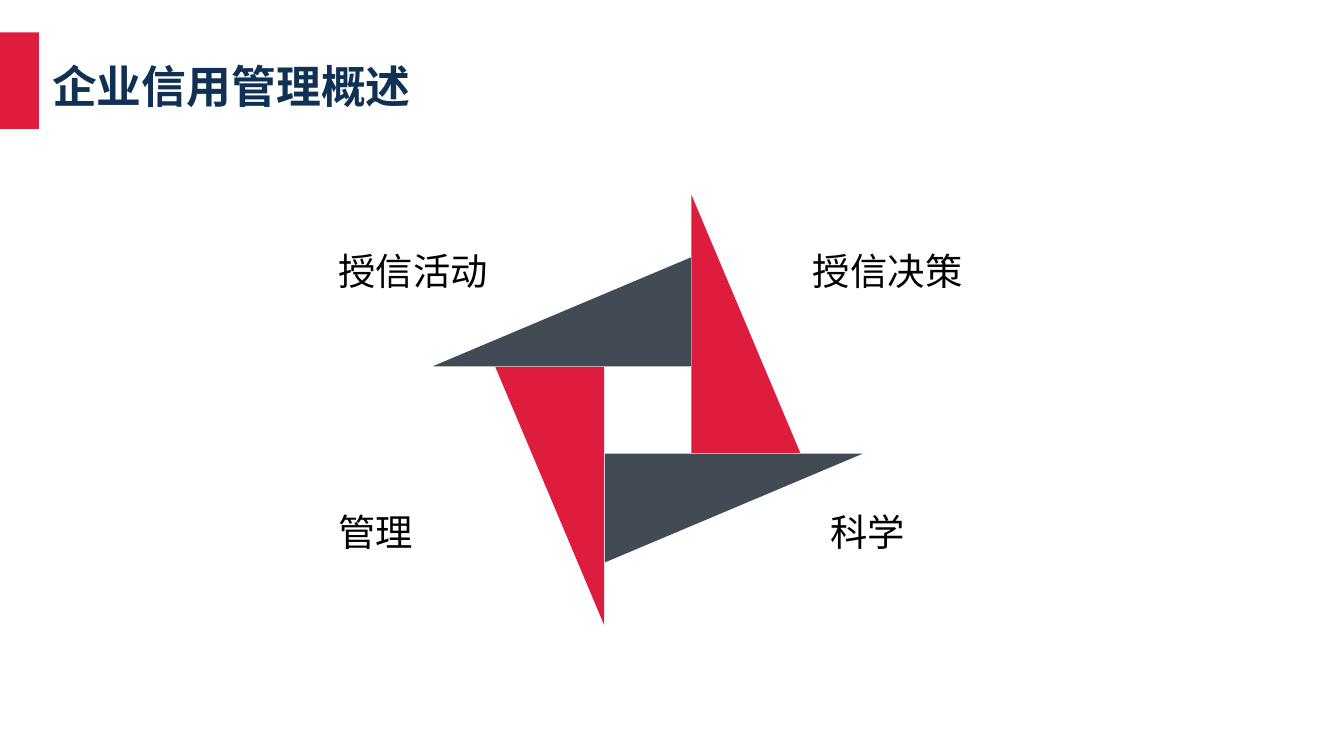
from pptx import Presentation
from pptx.dml.color import RGBColor
from pptx.enum.shapes import MSO_SHAPE
from pptx.enum.text import MSO_AUTO_SIZE
from pptx.util import Inches, Pt

RECTANGLE = MSO_SHAPE.RECTANGLE
RIGHT_TRIANGLE = MSO_SHAPE.RIGHT_TRIANGLE
GROW = MSO_AUTO_SIZE.SHAPE_TO_FIT_TEXT
FONT = "Quicksand"
RED, SLATE, NAVY, BLACK = "DD1C3E", "424A53", "103154", "000000"
SLIDE_WIDTH = 10
SLIDE_HEIGHT = SLIDE_WIDTH * 9 / 16


def color(value):
    return RGBColor.from_string(value)


def add_block(slide, kind, left, top, width, height, fill, rotation=0):
    shape = slide.shapes.add_shape(
        kind, Inches(left), Inches(top), Inches(width), Inches(height))
    shape.shadow.inherit = False
    shape.fill.solid()
    shape.fill.fore_color.rgb = color(fill)
    shape.line.fill.background()
    shape.rotation = rotation


def add_text(slide, left, top, width, height, text, size, fill, spacing, bold=False):
    box = slide.shapes.add_textbox(
        Inches(left), Inches(top), Inches(width), Inches(height))
    frame = box.text_frame
    frame.word_wrap = True
    frame.auto_size = GROW
    paragraph = frame.paragraphs[0]
    paragraph.line_spacing = spacing
    run = paragraph.add_run()
    run.text = text
    run.font.name = FONT
    run.font.size = Pt(size)
    run.font.bold = bold
    run.font.color.rgb = color(fill)


def add_header(slide, left, top, title):
    bar_width = 0.29
    add_text(slide, left + bar_width, top + 0.11, 6.55, 0.51,
             title, 24, NAVY, 1.1, True)
    add_block(slide, RECTANGLE, left, top, bar_width, 0.72, RED)


def add_pinwheel(slide, left, top, size):
    blade_width, blade_height = 0.81, 1.92
    center_x, center_y = left + size / 2, top + size / 2
    offset_x, offset_y = 0.73, -0.64
    for index, fill in enumerate((RED, SLATE, RED, SLATE)):
        add_block(slide, RIGHT_TRIANGLE,
                  center_x + offset_x - blade_width / 2,
                  center_y + offset_y - blade_height / 2,
                  blade_width, blade_height, fill, -90 * index % 360)
        offset_x, offset_y = offset_y, -offset_x


def add_labels(slide, left, top):
    row_gap = 1.94
    labels = (
        ("授信决策", 3.53, 0, 3.25),
        ("管理", 0, 1, 2.92),
        ("授信活动", 0, 0, 3.74),
        ("科学", 3.66, 1, 3.23),
    )
    for text, offset, row, width in labels:
        add_text(slide, left + offset, top + row * row_gap, width, 0.54,
                 text, 20, BLACK, 1.3)


def main():
    presentation = Presentation()
    presentation.slide_width = Inches(SLIDE_WIDTH)
    presentation.slide_height = Inches(SLIDE_HEIGHT)
    slide = presentation.slides.add_slide(presentation.slide_layouts[6])
    add_pinwheel(slide, 3.22, 1.45, 3.2)
    add_labels(slide, 2.42, 1.7)
    add_header(slide, 0, 0.24, "企业信用管理概述")
    presentation.save("out.pptx")


if __name__ == "__main__":
    main()
